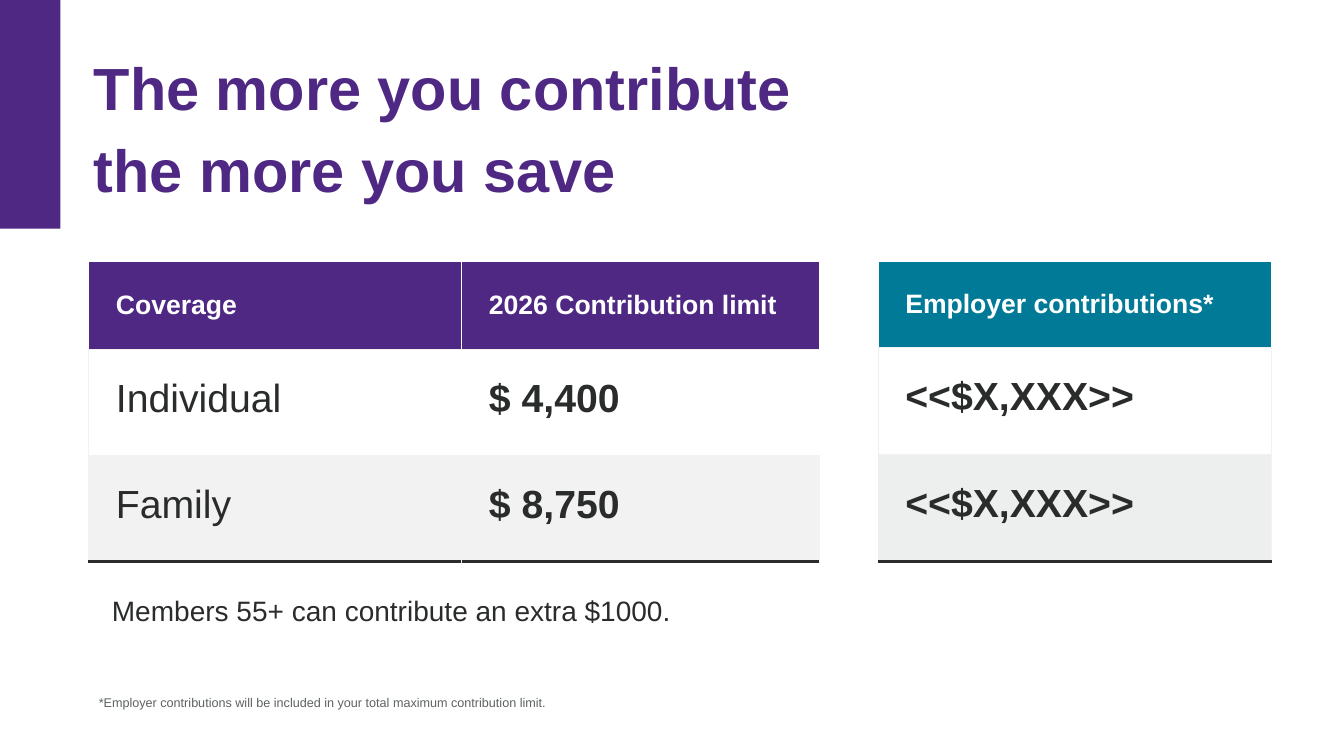
from lxml import etree
from pptx import Presentation
from pptx.dml.color import RGBColor
from pptx.enum.shapes import MSO_SHAPE
from pptx.enum.text import MSO_ANCHOR
from pptx.oxml.ns import qn
from pptx.util import Inches, Pt

RECTANGLE = MSO_SHAPE.RECTANGLE
TOP, MIDDLE = MSO_ANCHOR.TOP, MSO_ANCHOR.MIDDLE
FONT = "Arial"
CELL_INSET = 0.27
COLORS = {
    "purple": "4F2883",
    "teal": "007A96",
    "ink": "2A2C2C",
    "note": "5E6262",
    "white": "FFFFFF",
    "pale": "F2F2F2",
    "mist": "EDEEEE",
}


def color(name):
    """Return the named palette colour."""
    return RGBColor.from_string(COLORS[name])


def style_font(font, size, name, bold=False):
    """Apply the slide typeface, size, colour and weight."""
    font.name, font.size, font.bold = FONT, Pt(size), bold
    font.color.rgb = color(name)


def add_text(slide, box, text, size, name, bold=False, insets=(0, 0, 0, 0), spacing=1.0):
    """Place one wrapped paragraph in the given box."""
    frame = slide.shapes.add_textbox(*map(Inches, box)).text_frame
    frame.word_wrap = True
    frame.vertical_anchor = TOP
    frame.margin_left, frame.margin_top, frame.margin_right, frame.margin_bottom = map(Inches, insets)
    para = frame.paragraphs[0]
    para.text = text
    para.line_spacing = spacing
    style_font(para.runs[0].font, size, name, bold)


def add_title(slide, box):
    """Place the accent bar and the headline beside it."""
    left, top, width, height = box
    bar = slide.shapes.add_shape(RECTANGLE, *map(Inches, (left, top, 0.6, height)))
    bar.shadow.inherit = False
    bar.fill.solid()
    bar.fill.fore_color.rgb = color("purple")
    bar.line.fill.background()
    add_text(slide, (left + 0.93, top + 0.4, width - 0.93, 1.53),
             "The more you contribute the more you save", 42.5, "purple", True, spacing=1.15)


def set_borders(cell, names, bottom_width):
    """Draw the left, right, top and bottom borders of a cell."""
    properties = cell._tc.get_or_add_tcPr()
    for index, (side, name) in enumerate(zip(("lnL", "lnR", "lnT", "lnB"), names)):
        line = etree.Element(qn(f"a:{side}"))
        line.set("w", str(Pt(bottom_width if side == "lnB" else 1)))
        fill = etree.SubElement(line, qn("a:solidFill"))
        etree.SubElement(fill, qn("a:srgbClr")).set("val", COLORS[name])
        properties.insert(index, line)


def add_limits(slide, box, rows, columns, header_height, header, stripe, sides, regular=()):
    """Build a table with a coloured header, a white row and a striped row."""
    left, top, width, height = box
    frame = slide.shapes.add_table(len(rows), len(columns), *map(Inches, box))
    table = frame.table
    table.horz_banding = False
    for column, share in zip(table.columns, columns):
        column.width = Inches(width * share / sum(columns))
    last = len(rows) - 1
    fills = (header, "white", stripe)
    for row_index, values in enumerate(rows):
        is_header = row_index == 0
        table.rows[row_index].height = Inches(header_height if is_header else (height - header_height) / last)
        for column_index, value in enumerate(values):
            cell = table.cell(row_index, column_index)
            cell.text = value
            cell.margin_left = cell.margin_right = Inches(CELL_INSET)
            cell.margin_top = cell.margin_bottom = Inches(CELL_INSET)
            cell.vertical_anchor = MIDDLE if is_header else TOP
            cell.fill.solid()
            cell.fill.fore_color.rgb = color(fills[row_index])
            bold = is_header or column_index not in regular
            style_font(cell.text_frame.paragraphs[0].runs[0].font,
                       19 if is_header else 28, "white" if is_header else "ink", bold)
            edge_left, edge_right = sides[row_index]
            if row_index == 1 and column_index > 0:
                edge_left = "white"
            bottom = "ink" if row_index == last else "pale"
            set_borders(cell, (edge_left, edge_right, "white" if is_header else "pale", bottom),
                        3 if row_index == last else 1)


def add_notes(slide, box):
    """Place the catch-up remark and the footnote below the tables."""
    left, top, width, height = box
    add_text(slide, (left + 0.26, top, 5.97, 0.47),
             "Members 55+ can contribute an extra $1000.", 20, "ink",
             insets=(0, 0.05, 0.1, 0.05), spacing=1.2)
    add_text(slide, (left, top + height - 0.29, width, 0.29),
             "*Employer contributions will be included in your total maximum contribution limit.",
             9, "note", insets=(0.13, 0.07, 0.13, 0.07))


def main():
    """Build and save the contribution slide."""
    deck = Presentation()
    deck.slide_width, deck.slide_height = Inches(13.33), Inches(7.5)
    slide = deck.slides.add_slide(deck.slide_layouts[6])
    add_title(slide, (0, 0, 8.13, 2.27))
    add_limits(slide, (0.88, 2.59, 7.25, 2.98),
               [("Coverage", "2026 Contribution limit"), ("Individual", "$ 4,400"), ("Family", "$ 8,750")],
               (3.7, 3.55), 0.88, "purple", "pale",
               (("white", "white"), ("pale", "white"), ("pale", "pale")), regular=(0,))
    add_limits(slide, (8.71, 2.59, 3.9, 2.98),
               [("Employer contributions*",), ("<<$X,XXX>>",), ("<<$X,XXX>>",)],
               (1,), 0.86, "teal", "mist",
               (("white", "white"), ("mist", "pale"), ("mist", "pale")))
    add_notes(slide, (0.85, 5.77, 11.62, 1.34))
    deck.save("out.pptx")


if __name__ == "__main__":
    main()
